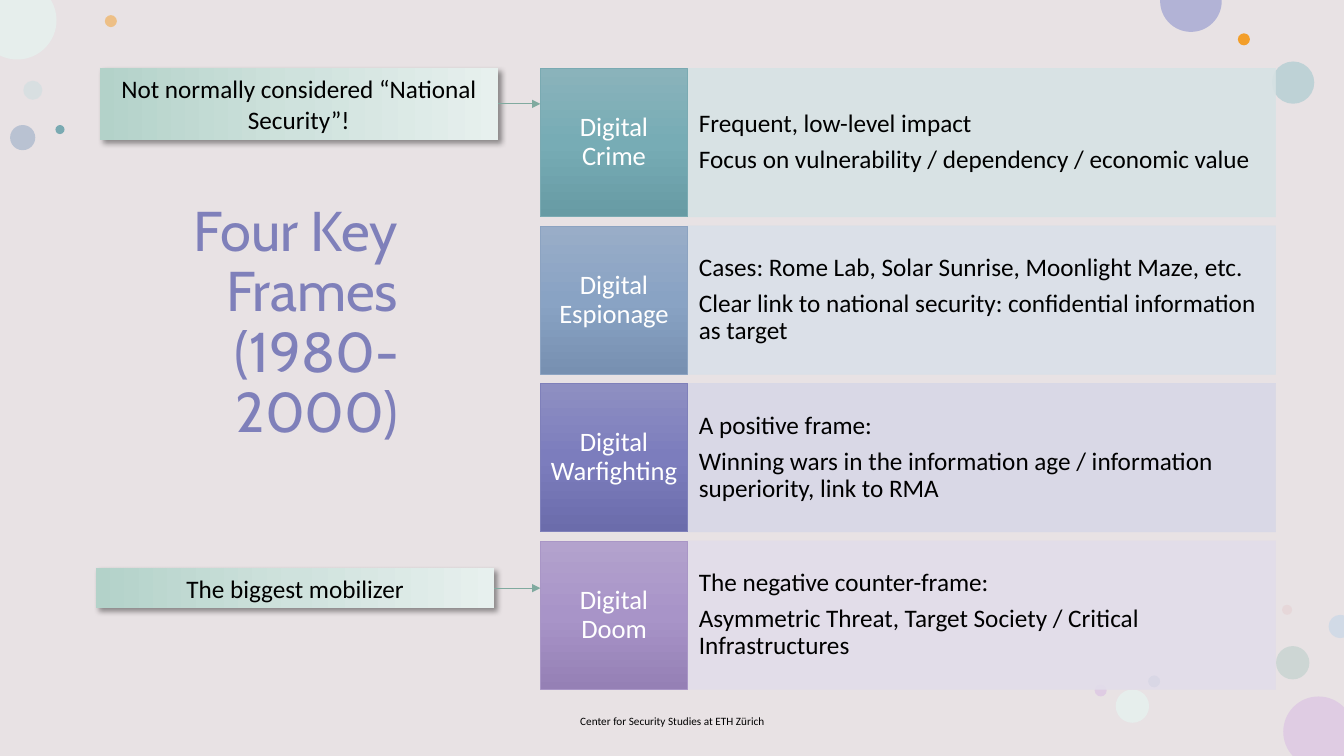
"""Build the slide on four key frames of digital threats, 1980-2000."""
import math

import lxml.etree
import pptx
import pptx.dml.color
import pptx.enum.shapes
import pptx.enum.text
import pptx.oxml.ns
import pptx.util

Pt = pptx.util.Pt
SHAPE = pptx.enum.shapes.MSO_SHAPE
ALIGN = pptx.enum.text.PP_ALIGN
ANCHOR = pptx.enum.text.MSO_ANCHOR
qn = pptx.oxml.ns.qn

COLORS = {
    "background": "E8E2E4", "title": "7F80BA", "black": "000000", "white": "FFFFFF",
    "arrow": "80AA9F", "mist": "CADDE0", "orange": "F39E29", "sage": "B3CCC5",
    "blue": "8CA3C1", "aqua": "AFCCD1", "rose": "E3BEBE", "mint": "E6EEEC",
    "pink": "DFCCE3", "lilac": "B2B3D6", "teal": "7AAAB2", "sky": "D1DAE6",
    "crime": "D7E2E4", "espionage": "DAE0E9", "warfighting": "D8D8E7", "doom": "E2DDEA",
    "violet": "A996C6",
}
GRADIENTS = {
    "crime": ("8AB3BB", "77ACB5", "679BA4"),
    "espionage": ("99ADC8", "89A3C4", "7790B1"),
    "warfighting": ("8E8FC2", "7C7DBD", "6B6CAB"),
    "doom": ("B3A2CD", "A894C8", "9580B5"),
    "callout": ("B3D2C9", "CFE2DD", "E7F0EE"),
}
TITLE = "Four Key Frames (1980-2000)"
FOOTER = "Center for Security Studies at ETH Zürich"
FRAMES = [
    ("Digital Crime", "crime", "teal",
     ["Frequent, low-level impact",
      "Focus on vulnerability / dependency / economic value"]),
    ("Digital Espionage", "espionage", "blue",
     ["Cases: Rome Lab, Solar Sunrise, Moonlight Maze, etc.",
      "Clear link to national security: confidential information as target"]),
    ("Digital Warfighting", "warfighting", "title",
     ["A positive frame:",
      "Winning wars in the information age / information superiority, link to RMA"]),
    ("Digital Doom", "doom", "violet",
     ["The negative counter-frame:",
      "Asymmetric Threat, Target Society / Critical Infrastructures"]),
]
CALLOUTS = [
    ("The biggest mobilizer", (68.6, 405.6, 284.4, 29)),
    ("Not normally considered “National Security”!", (71.3, 48.7, 284.4, 51)),
]
BUBBLES = [
    (16.6, 57.6, 13.7, "mist", 50), (74.9, 10.8, 8.6, "orange", 50),
    (911.5, 461.5, 23.8, "sage", 50), (7.2, 89.3, 18, "blue", 50),
    (908.6, 43.9, 30.2, "aqua", 72), (884.2, 23.8, 8.6, "orange", 100),
    (915.8, 432, 7.2, "rose", 28), (820.1, 482.4, 8.6, "blue", 100),
    (797, 492.5, 23.8, "mint", 100), (781.9, 488.9, 8.6, "pink", 100),
    (39.6, 89.3, 6.5, "teal", 100),
]
CUT_BUBBLES = [
    ((941.8, 522.7), 25.2, (136.6, 316.2), [(960, 540)], "pink"),
    ((12.3, 14.4), 28.1, (-30.8, 116), [(0, 0)], "mint"),
    ((850.7, 0.8), 22, (-2.08, 182.08), [], "lilac"),
    ((957.3, 447.5), 8.3, (71, 289), [], "sky"),
]
WIDTH, HEIGHT = 960, 540
FRAME_TOP, FRAME_PITCH, FRAME_HEIGHT = 48.9, 112.5, 106
LABEL_LEFT, LABEL_WIDTH, PANEL_WIDTH = 386, 105.2, 420


def rgb(name):
    return pptx.dml.color.RGBColor.from_string(COLORS[name])


def add_child(parent, tag, **attributes):
    child = lxml.etree.SubElement(parent, qn(tag))
    for key, value in attributes.items():
        child.set(key, str(value))
    return child


def outline(shape, color):
    shape.line.color.rgb = rgb(color)
    shape.line.width = Pt(0.5)


def paint(shape, color, opacity=100, outlined=False):
    shape.shadow.inherit = False
    shape.fill.solid()
    shape.fill.fore_color.rgb = rgb(color)
    if outlined:
        outline(shape, color)
    else:
        shape.line.fill.background()
    if opacity < 100:
        for tone in shape.element.spPr.iter(qn("a:srgbClr")):
            add_child(tone, "a:alpha", val=opacity * 1000)


def paint_gradient(shape, name, angle):
    shape.shadow.inherit = False
    shape.fill.gradient()
    gradient = shape.element.spPr.find(qn("a:gradFill"))
    stops = gradient.find(qn("a:gsLst"))
    stops.clear()
    for position, tone in zip((0, 50000, 100000), GRADIENTS[name]):
        add_child(add_child(stops, "a:gs", pos=position), "a:srgbClr", val=tone)
    gradient.find(qn("a:lin")).set("ang", str(angle * 60000))


def write(shape, lines, size, color="black", font="Calibri", align=ALIGN.LEFT,
          anchor=ANCHOR.MIDDLE, insets=(7.2, 3.6), spacing=1.0, after=0):
    frame = shape.text_frame
    frame.word_wrap = True
    frame.auto_size = pptx.enum.text.MSO_AUTO_SIZE.NONE
    frame.vertical_anchor = anchor
    frame.margin_left = frame.margin_right = Pt(insets[0])
    frame.margin_top = frame.margin_bottom = Pt(insets[1])
    for index, line in enumerate(lines):
        paragraph = frame.add_paragraph() if index else frame.paragraphs[0]
        paragraph.alignment = align
        paragraph.line_spacing = spacing
        paragraph.space_before = Pt(0)
        paragraph.space_after = Pt(after)
        run = paragraph.add_run()
        run.text = line
        run.font.size = Pt(size)
        run.font.name = font
        run.font.color.rgb = rgb(color)


def add_box(shapes, left, top, width, height, kind=SHAPE.RECTANGLE):
    return shapes.add_shape(kind, Pt(left), Pt(top), Pt(width), Pt(height))


def add_cut_bubble(shapes, center, radius, sweep, corners, color):
    def on_rim(degrees, stretch=0):
        turn = math.radians(degrees)
        cos, sin = math.cos(turn), math.sin(turn)
        return (Pt(center[0] + radius * (cos - stretch * sin)),
                Pt(center[1] + radius * (sin + stretch * cos)))

    quarters = [angle for angle in range(0, 360, 90) if sweep[0] < angle < sweep[1]]
    angles = [sweep[0], *quarters, sweep[1]]
    builder = shapes.build_freeform(*on_rim(angles[0]))
    builder.add_line_segments([on_rim(angle) for angle in angles[1:]]
                              + [(Pt(x), Pt(y)) for x, y in corners], close=True)
    bubble = builder.convert_to_shape()
    edges = list(bubble.element.spPr.iter(qn("a:lnTo")))
    for edge, start, end in zip(edges, angles, angles[1:]):
        pull = 4 / 3 * math.tan(math.radians(end - start) / 4)
        edge.tag = qn("a:cubicBezTo")
        for index, (x, y) in enumerate((on_rim(start, pull), on_rim(end, -pull))):
            control = add_child(edge, "a:pt", x=x - bubble.left, y=y - bubble.top)
            edge.insert(index, control)
    paint(bubble, color)


def add_frame(shapes, index, label, name, edge, points):
    top = FRAME_TOP + index * FRAME_PITCH
    panel = add_box(shapes, LABEL_LEFT + LABEL_WIDTH, top, PANEL_WIDTH, FRAME_HEIGHT)
    paint(panel, name, 90, outlined=True)
    write(panel, points, 18, insets=(8, 26.6), spacing=0.9, after=6.3)
    tab = add_box(shapes, LABEL_LEFT, top, LABEL_WIDTH, FRAME_HEIGHT)
    paint_gradient(tab, name, 90)
    outline(tab, edge)
    write(tab, [label], 19, "white", align=ALIGN.CENTER, insets=(5.8, 10.8), spacing=0.9)


def add_callout(shapes, message, place):
    callout = add_box(shapes, *place)
    paint_gradient(callout, "callout", 0)
    callout.line.fill.background()
    shadow = add_child(callout.element.spPr.find(qn("a:effectLst")), "a:outerShdw",
                       blurRad=Pt(4), dist=Pt(3), dir=45 * 60000, algn="tl", rotWithShape=0)
    add_child(add_child(shadow, "a:srgbClr", val=COLORS["black"]), "a:alpha", val=40000)
    write(callout, [message], 18, align=ALIGN.CENTER)

    left, top, width, height = place
    middle = Pt(top + height / 2)
    arrow = shapes.add_connector(pptx.enum.shapes.MSO_CONNECTOR.STRAIGHT,
                                 Pt(left + width), middle, Pt(LABEL_LEFT), middle)
    arrow.begin_connect(callout, 3)
    outline(arrow, "arrow")
    add_child(arrow.element.spPr.find(qn("a:ln")), "a:tailEnd", type="triangle")
    add_child(arrow.element.spPr, "a:effectLst")


def main():
    deck = pptx.Presentation()
    deck.slide_width, deck.slide_height = Pt(WIDTH), Pt(HEIGHT)
    slide = deck.slides.add_slide(deck.slide_layouts[5])
    shapes = slide.shapes
    title = shapes.title
    paint(add_box(shapes, 0, 0, WIDTH, HEIGHT), "background")
    for left, top, size, color, opacity in BUBBLES:
        paint(add_box(shapes, left, top, size, size, SHAPE.OVAL), color, opacity)
    for bubble in CUT_BUBBLES:
        add_cut_bubble(shapes, *bubble)
    footer = shapes.add_textbox(Pt(267.6), Pt(506.5), Pt(425.5), Pt(17.3))
    write(footer, [FOOTER], 8, align=ALIGN.CENTER, insets=(0, 0))
    title.left, title.top, title.width, title.height = Pt(46), Pt(132.7), Pt(245.5), Pt(188.6)
    write(title, [TITLE], 40, "title", "Cabin", ALIGN.RIGHT, ANCHOR.BOTTOM, spacing=0.9)
    footer.element.addnext(title.element)
    for index, frame in enumerate(FRAMES):
        add_frame(shapes, index, *frame)
    for callout in CALLOUTS:
        add_callout(shapes, *callout)
    deck.save("out.pptx")


if __name__ == "__main__":
    main()
